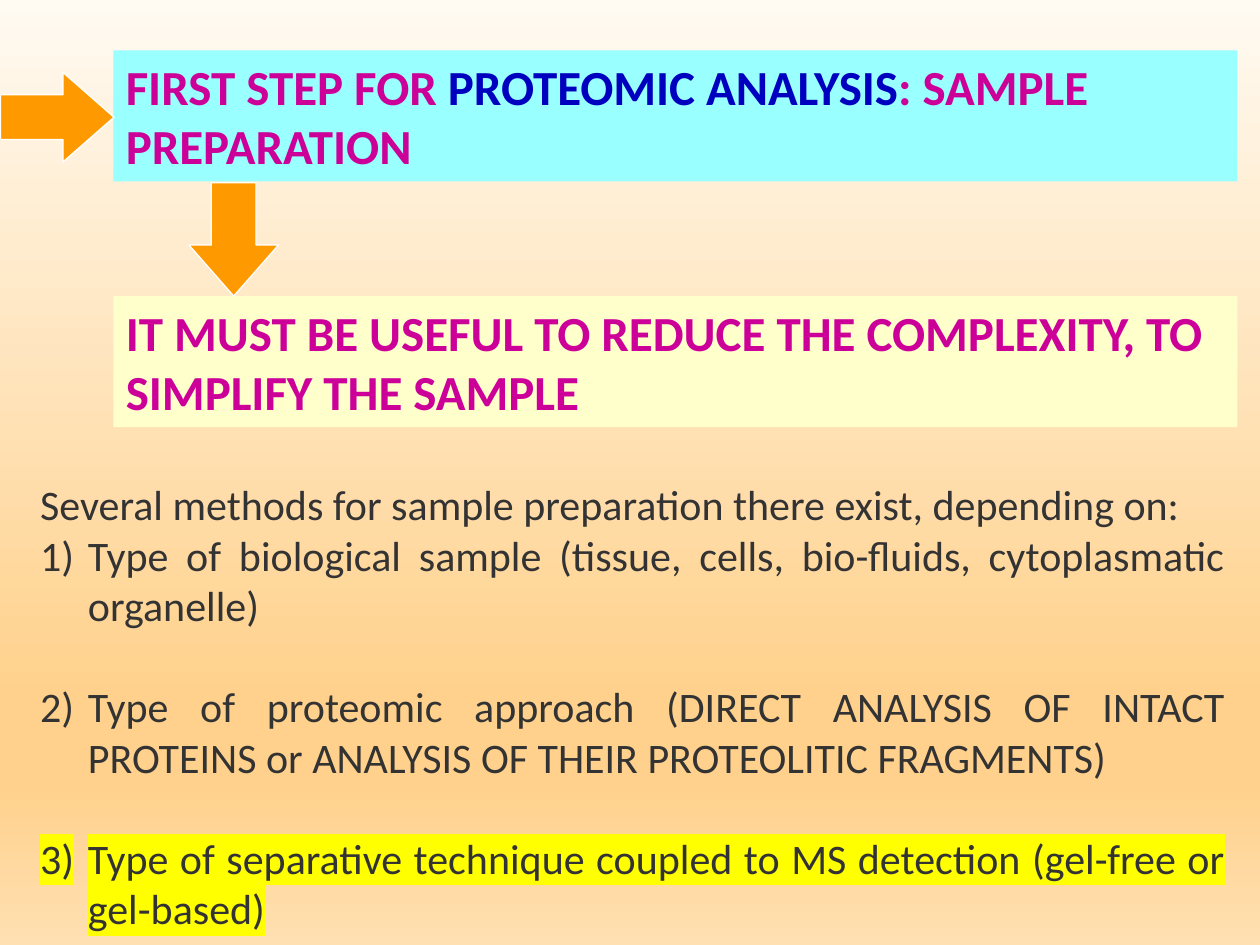
from lxml import etree
from pptx import Presentation
from pptx.dml.color import RGBColor
from pptx.enum import shapes, text
from pptx.oxml import ns
from pptx.util import Inches, Pt

MAGENTA = RGBColor(0xCC, 0x00, 0x99)
BLUE = RGBColor(0x00, 0x00, 0xBF)
GREY = RGBColor(0x33, 0x33, 0x33)
CYAN = RGBColor(0x99, 0xFF, 0xFF)
CREAM = RGBColor(0xFF, 0xFF, 0xCC)
ORANGE = RGBColor(0xFF, 0x99, 0x00)
WHITE = RGBColor(0xFF, 0xFF, 0xFF)
YELLOW = RGBColor(0xFF, 0xFF, 0x00)
SKY = [(0, RGBColor(0xFF, 0xFA, 0xF2)), (74, RGBColor(0xFF, 0xD1, 0x8C)),
       (83, RGBColor(0xFF, 0xD1, 0x8C)), (100, RGBColor(0xFF, 0xE0, 0xB2))]

HEADING = {"name": "Calibri", "size": Pt(28), "bold": True}
BODY = {"name": "Calibri", "size": Pt(24)}

LEFT, WIDTH, HEIGHT = 0.9, 8.92, 1.04
ARROW_WIDTH, ARROW_HEIGHT = 0.71, 0.9
METHODS = [
    "Type of biological sample (tissue, cells, bio-fluids, cytoplasmatic organelle)",
    "Type of proteomic approach (DIRECT ANALYSIS OF INTACT PROTEINS or "
    "ANALYSIS OF THEIR PROTEOLITIC FRAGMENTS)",
    "Type of separative technique coupled to MS detection (gel-free or gel-based)",
]


def paint_background(page):
    fill = page.background.fill
    fill.gradient()
    fill.gradient_angle = 270
    stops = page.element.find(".//" + ns.qn("a:gsLst"))
    for stop in list(stops):
        stops.remove(stop)
    for percent, color in SKY:
        stop = etree.SubElement(stops, ns.qn("a:gs"), pos=str(percent * 1000))
        etree.SubElement(stop, ns.qn("a:srgbClr"), val=str(color))


def add_span(para, words, color, style):
    span = para.add_run()
    span.text = words
    for name, value in style.items():
        setattr(span.font, name, value)
    span.font.color.rgb = color
    return span


def highlight(span, color):
    latin = span.font._element.find(ns.qn("a:latin"))
    mark = etree.Element(ns.qn("a:highlight"))
    etree.SubElement(mark, ns.qn("a:srgbClr"), val=str(color))
    latin.addprevious(mark)


def number(para):
    """Give the paragraph an automatic number with a hanging indent."""
    props = para._p.get_or_add_pPr()
    props.set("marL", str(Inches(0.38)))
    props.set("indent", str(Inches(-0.38)))
    etree.SubElement(props, ns.qn("a:buFont"), typeface="+mj-lt")
    etree.SubElement(props, ns.qn("a:buAutoNum"), type="arabicParenR")


def add_banner(page, left, top, width, height, fill, spans):
    box = page.shapes.add_shape(shapes.MSO_SHAPE.RECTANGLE, Inches(left), Inches(top),
                                Inches(width), Inches(height))
    box.shadow.inherit = False
    box.fill.solid()
    box.fill.fore_color.rgb = fill
    box.line.fill.background()
    frame = box.text_frame
    frame.word_wrap = True
    frame.vertical_anchor = text.MSO_ANCHOR.TOP
    para = frame.paragraphs[0]
    para.alignment = text.PP_ALIGN.LEFT
    for words, color in spans:
        add_span(para, words, color, HEADING)


def add_arrow(page, left, top, rotation=0):
    arrow = page.shapes.add_shape(shapes.MSO_SHAPE.DOWN_ARROW, Inches(left), Inches(top),
                                  Inches(ARROW_WIDTH), Inches(ARROW_HEIGHT))
    arrow.adjustments[1] = 0.57
    arrow.rotation = rotation
    arrow.shadow.inherit = False
    arrow.fill.solid()
    arrow.fill.fore_color.rgb = ORANGE
    arrow.line.color.rgb = WHITE
    arrow.line.width = Pt(0.75)


def add_methods(page, left, top, width, height):
    box = page.shapes.add_textbox(Inches(left), Inches(top), Inches(width), Inches(height))
    frame = box.text_frame
    frame.word_wrap = True
    intro = frame.paragraphs[0]
    intro.alignment = text.PP_ALIGN.JUSTIFY
    add_span(intro, "Several methods for sample preparation there exist, depending on:",
             GREY, BODY)
    for index, method in enumerate(METHODS):
        para = frame.add_paragraph()
        para.alignment = text.PP_ALIGN.JUSTIFY
        para.space_before = Pt(29 if index else 0)
        number(para)
        span = add_span(para, method, GREY, BODY)
    highlight(span, YELLOW)


def main():
    deck = Presentation()
    deck.slide_width, deck.slide_height = Inches(10), Inches(7.5)
    page = deck.slides.add_slide(deck.slide_layouts[6])
    paint_background(page)
    add_banner(page, LEFT, 0.4, WIDTH, HEIGHT, CYAN,
               [("FIRST STEP FOR ", MAGENTA), ("PROTEOMIC ANALYSIS", BLUE),
                (": SAMPLE PREPARATION", MAGENTA)])
    add_arrow(page, 0.1, 0.48, rotation=270)
    add_methods(page, 0.22, 3.75, 9.6, 3.74)
    add_arrow(page, 1.5, 1.45)
    add_banner(page, LEFT, 2.35, WIDTH, HEIGHT, CREAM,
               [("IT MUST BE USEFUL TO REDUCE THE COMPLEXITY, TO SIMPLIFY THE SAMPLE",
                 MAGENTA)])
    deck.save("out.pptx")


if __name__ == "__main__":
    main()
